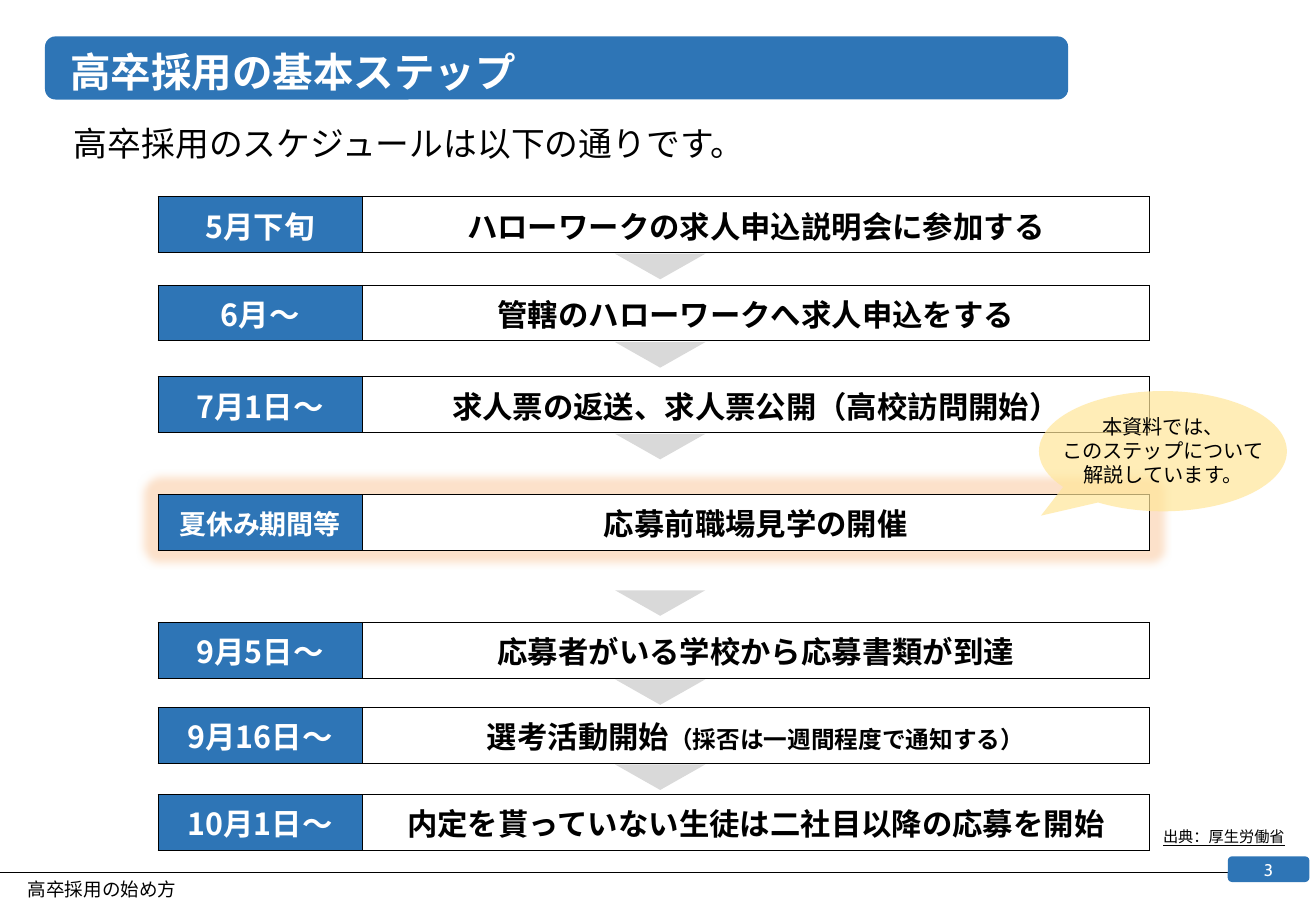
import pptx
import pptx.util
import pptx.dml.color
import pptx.enum.shapes
import pptx.enum.text
import pptx.oxml
import pptx.oxml.ns

RGB = pptx.dml.color.RGBColor
BLUE = RGB(0x2E, 0x75, 0xB6)
WHITE = RGB(0xFF, 0xFF, 0xFF)
BLACK = RGB(0x00, 0x00, 0x00)
GRAY = RGB(0xD9, 0xD9, 0xD9)
GLOW = RGB(0xFC, 0xE1, 0xCA)
CREAM = RGB(0xFF, 0xE6, 0x99)

FORM = pptx.enum.shapes.MSO_SHAPE
ALIGN = pptx.enum.text.PP_ALIGN
MID = pptx.enum.text.MSO_ANCHOR.MIDDLE
TOP = pptx.enum.text.MSO_ANCHOR.TOP
Pt = pptx.util.Pt
WIDE = pptx.util.Inches(10.83)
HIGH = pptx.util.Inches(7.5)
NOTO = "Noto Sans CJK JP"
NS = 'xmlns:a="http://schemas.openxmlformats.org/drawingml/2006/main"'

STEPS = [
    (0, "5月下旬", "ハローワークの求人申込説明会に参加する", ""),
    (0.135, "6月～", "管轄のハローワークへ求人申込をする", ""),
    (0.275, "7月1日～", "求人票の返送、求人票公開（高校訪問開始）", ""),
    (0.455, "夏休み期間等", "応募前職場見学の開催", ""),
    (0.65, "9月5日～", "応募者がいる学校から応募書類が到達", ""),
    (0.78, "9月16日～", "選考活動開始", "（採否は一週間程度で通知する）"),
    (0.913, "10月1日～", "内定を貰っていない生徒は二社目以降の応募を開始", ""),
]
FOCUS = 3


def share(x, y, w, h):
    return [int(WIDE * x / 100), int(HIGH * y / 100),
            int(WIDE * w / 100), int(HIGH * h / 100)]


def part(box, x, y, w, h):
    return [int(box[0] + box[2] * x), int(box[1] + box[3] * y),
            int(box[2] * w), int(box[3] * h)]


def add_xml(node, text):
    child = pptx.oxml.parse_xml(text)
    node.append(child)
    return child


def put_run(para, text, size, color, **form):
    run = para.add_run()
    run.text = text
    form = {"name": NOTO, "size": Pt(size), **form}
    for key, value in form.items():
        setattr(run.font, key, value)
    run.font.color.rgb = color
    add_xml(run.font._element, f'<a:ea {NS} typeface="{form["name"]}"/>')


def put_text(shapes, box, lines, size, color, align=ALIGN.LEFT,
             anchor=TOP, space=0.9, **form):
    frame = shapes.add_textbox(*box).text_frame
    frame.word_wrap = True
    frame.vertical_anchor = anchor
    for num, line in enumerate(lines):
        para = frame.add_paragraph() if num else frame.paragraphs[0]
        para.alignment = align
        para.line_spacing = space
        put_run(para, line, size, color, **form)


def put_shape(shapes, kind, box, color):
    shape = shapes.add_shape(kind, *box)
    shape.shadow.inherit = False
    shape.fill.solid()
    shape.fill.fore_color.rgb = color
    shape.line.fill.background()
    return shape


def fill_cell(cell, color):
    props = cell._tc.get_or_add_tcPr()
    for side in ("lnL", "lnR", "lnT", "lnB"):
        add_xml(props, f'<a:{side} {NS} w="6350"><a:solidFill>'
                       f'<a:srgbClr val="{BLACK}"/></a:solidFill></a:{side}>')
    cell.fill.solid()
    cell.fill.fore_color.rgb = color
    cell.vertical_anchor = MID
    para = cell.text_frame.paragraphs[0]
    para.alignment = ALIGN.CENTER
    return para


def draw_head(shapes, box):
    put_shape(shapes, FORM.ROUNDED_RECTANGLE, box, BLUE)
    put_text(shapes, part(box, 0.013, 0.19, 0.945, 0.81),
             ["高卒採用の基本ステップ"], 24, WHITE, anchor=MID, bold=True)


def draw_step(shapes, box, when, what, note, size):
    table = shapes.add_table(1, 2, *box).table
    table.first_row = table.horz_banding = False
    for col, ratio in zip(table.columns, (0.206, 0.794)):
        col.width = int(box[2] * ratio)
    put_run(fill_cell(table.cell(0, 0), BLUE), when, size, WHITE, bold=True)
    para = fill_cell(table.cell(0, 1), WHITE)
    put_run(para, what, 18, BLACK, bold=True)
    if note:
        put_run(para, note, 14, BLACK, bold=True)


def draw_flow(shapes, box):
    halo = part(box, -0.022, STEPS[FOCUS][0] - 0.039, 1.044, 0.154)
    glow = put_shape(shapes, FORM.ROUNDED_RECTANGLE, halo, GLOW)
    effect = glow._element.spPr.find(pptx.oxml.ns.qn("a:effectLst"))
    add_xml(effect, f'<a:softEdge {NS} rad="63500"/>')
    for num, (top, when, what, note) in enumerate(STEPS):
        focus = num == FOCUS
        draw_step(shapes, part(box, 0, top, 1, 0.085), when, what, note,
                  16 if focus else 18)
        if num < len(STEPS) - 1:
            gap = 0.146 if focus else 0.087
            arrow = put_shape(shapes, FORM.ISOSCELES_TRIANGLE,
                              part(box, 0.461, top + gap, 0.091, 0.039), GRAY)
            arrow.rotation = 180


def draw_note(shapes, box):
    group = shapes.add_group_shape().shapes
    cloud = put_shape(group, FORM.OVAL_CALLOUT, box, CREAM)
    cloud.adjustments[0] = -0.492
    cloud.adjustments[1] = 0.536
    tint = cloud._element.spPr.find(".//" + pptx.oxml.ns.qn("a:srgbClr"))
    add_xml(tint, f'<a:alpha {NS} val="70000"/>')
    put_text(group, part(box, 0, 0.14, 1, 0.72),
             ["本資料では、", "このステップについて", "解説しています。"],
             12, BLACK, align=ALIGN.CENTER, space=1.0)


def draw_foot(shapes, box):
    x, y, w, _ = part(box, 0, 0.29, 0.933, 0)
    rule = shapes.add_connector(pptx.enum.shapes.MSO_CONNECTOR.STRAIGHT,
                                x, y, x + w, y)
    rule.line.color.rgb = BLACK
    rule.line.width = Pt(0.25)
    add_xml(rule._element.spPr, f"<a:effectLst {NS}/>")
    put_shape(shapes, FORM.ROUNDED_RECTANGLE,
              part(box, 0.933, 0, 0.062, 0.47), BLUE)
    put_text(shapes, part(box, 0.933, -0.2, 0.062, 0.89), ["3"], 10, WHITE,
             align=ALIGN.CENTER, anchor=MID, space=1.0, name="Cabin")
    put_text(shapes, part(box, 0.012, 0.333, 0.334, 0.69),
             ["高卒採用の始め方"], 11, BLACK)


def main():
    deck = pptx.Presentation()
    deck.slide_width, deck.slide_height = WIDE, HIGH
    shapes = deck.slides.add_slide(deck.slide_layouts[6]).shapes
    draw_head(shapes, share(3.42, 4, 77.75, 6.93))
    put_text(shapes, share(4.71, 13.33, 68.98, 4.93),
             ["高卒採用のスケジュールは以下の通りです。"], 20, BLACK)
    draw_flow(shapes, share(12, 21.6, 75.35, 71.87))
    draw_note(shapes, share(78.95, 42.93, 18.84, 13.2))
    put_text(shapes, share(76.73, 90.4, 21.79, 3.07), ["出典：厚生労働省"],
             9, BLACK, align=ALIGN.RIGHT, underline=True)
    draw_foot(shapes, share(0, 94, 100, 6))
    deck.save("out.pptx")


if __name__ == "__main__":
    main()
